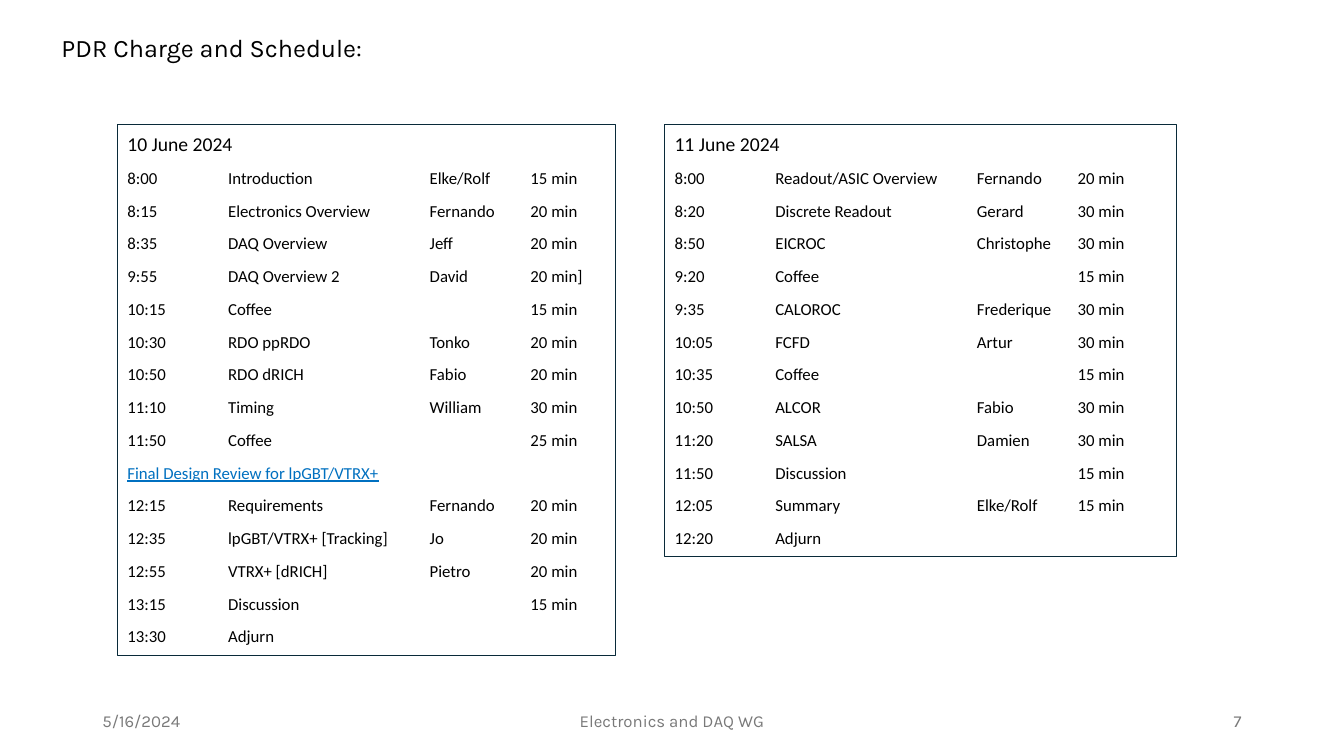
import dataclasses

import lxml.etree
import pptx
import pptx.dml.color
import pptx.enum.shapes
import pptx.enum.text
import pptx.oxml.ns
import pptx.util

Cm = pptx.util.Cm
Align = pptx.enum.text.PP_ALIGN
Anchor = pptx.enum.text.MSO_ANCHOR
Fit = pptx.enum.text.MSO_AUTO_SIZE


@dataclasses.dataclass(frozen=True)
class Theme:
    ink: str = "000000"
    muted: str = "797979"
    link: str = "0070C0"
    border: str = "092A39"
    heading_font: str = "Karla"
    body_font: str = "Calibri"
    title_size: int = 18
    day_size: int = 14
    body_size: int = 12
    border_width: float = 0.75
    column_stops: tuple = (2.54, 7.62, 10.16)


def apply_format(target, values):
    for name, value in values.items():
        setattr(target, name, value)


class SlideBuilder:
    def __init__(self, page, theme):
        self.page = page
        self.theme = theme

    def color(self, code):
        return pptx.dml.color.RGBColor.from_string(code)

    def add_span(self, para, text, color, **font):
        span = para.add_run()
        span.text = text
        apply_format(span.font, font)
        span.font.color.rgb = self.color(color)

    def label(self, text, bounds, color, size, align=Align.LEFT, **frame):
        box = self.page.shapes.add_textbox(*map(Cm, bounds))
        apply_format(box.text_frame, frame)
        para = box.text_frame.paragraphs[0]
        para.alignment = align
        self.add_span(para, text, color, name=self.theme.heading_font,
                      size=pptx.util.Pt(size))

    def add_column_stops(self, para):
        qn = pptx.oxml.ns.qn
        stops = lxml.etree.SubElement(para._p.get_or_add_pPr(), qn("a:tabLst"))
        for stop in self.theme.column_stops:
            lxml.etree.SubElement(stops, qn("a:tab"), pos=str(int(Cm(stop))), algn="l")

    def schedule(self, day, rows, bounds):
        theme = self.theme
        box = self.page.shapes.add_shape(
            pptx.enum.shapes.MSO_SHAPE.RECTANGLE, *map(Cm, bounds))
        box.shadow.inherit = False
        box.fill.background()
        box.line.color.rgb = self.color(theme.border)
        box.line.width = pptx.util.Pt(theme.border_width)
        frame = box.text_frame
        apply_format(frame, {"word_wrap": True, "vertical_anchor": Anchor.TOP,
                             "auto_size": Fit.SHAPE_TO_FIT_TEXT})
        for index, row in enumerate([(day,), *rows]):
            para = frame.add_paragraph() if index else frame.paragraphs[0]
            apply_format(para, {"alignment": Align.LEFT, "line_spacing": 1.07,
                                "space_after": pptx.util.Pt(8)})
            self.add_column_stops(para)
            is_link = index > 0 and len(row) == 1
            size = theme.body_size if index else theme.day_size
            self.add_span(para, "\t".join(row), theme.link if is_link else theme.ink,
                          name=theme.body_font, size=pptx.util.Pt(size),
                          underline=is_link)


FIRST_DAY = [
    ("8:00", "Introduction", "Elke/Rolf", "15 min"),
    ("8:15", "Electronics Overview", "Fernando", "20 min"),
    ("8:35", "DAQ Overview", "Jeff", "20 min"),
    ("9:55", "DAQ Overview 2", "David", "20 min]"),
    ("10:15", "Coffee", "", "15 min"),
    ("10:30", "RDO ppRDO", "Tonko", "20 min"),
    ("10:50", "RDO dRICH", "Fabio", "20 min"),
    ("11:10", "Timing", "William", "30 min"),
    ("11:50", "Coffee", "", "25 min"),
    ("Final Design Review for lpGBT/VTRX+",),
    ("12:15", "Requirements", "Fernando", "20 min"),
    ("12:35", "lpGBT/VTRX+ [Tracking]", "Jo", "20 min"),
    ("12:55", "VTRX+ [dRICH]", "Pietro", "20 min"),
    ("13:15", "Discussion", "", "15 min"),
    ("13:30", "Adjurn"),
]

SECOND_DAY = [
    ("8:00", "Readout/ASIC Overview", "Fernando", "20 min"),
    ("8:20", "Discrete Readout", "Gerard", "30 min"),
    ("8:50", "EICROC", "Christophe", "30 min"),
    ("9:20", "Coffee", "", "15 min"),
    ("9:35", "CALOROC", "Frederique", "30 min"),
    ("10:05", "FCFD", "Artur", "30 min"),
    ("10:35", "Coffee", "", "15 min"),
    ("10:50", "ALCOR", "Fabio", "30 min"),
    ("11:20", "SALSA", "Damien", "30 min"),
    ("11:50", "Discussion", "", "15 min"),
    ("12:05", "Summary", "Elke/Rolf", "15 min"),
    ("12:20", "Adjurn"),
]


def main():
    deck = pptx.Presentation()
    apply_format(deck, {"slide_width": Cm(33.87), "slide_height": Cm(19.05)})
    page = deck.slides.add_slide(deck.slide_layouts[6])
    theme = Theme()
    builder = SlideBuilder(page, theme)

    footers = [
        ("5/16/2024", 2.33, 7.62, Align.LEFT),
        ("Electronics and DAQ WG", 11.22, 11.43, Align.CENTER),
        ("7", 23.92, 7.62, Align.RIGHT),
    ]
    for text, left, width, align in footers:
        builder.label(text, (left, 17.66, width, 1.01), theme.muted, theme.body_size,
                      align, word_wrap=True, vertical_anchor=Anchor.MIDDLE)

    builder.label("PDR Charge and Schedule:", (1.3, 0.69, 8.33, 1.03), theme.ink,
                  theme.title_size, word_wrap=False, auto_size=Fit.SHAPE_TO_FIT_TEXT)
    builder.schedule("10 June 2024", FIRST_DAY, (2.96, 3.15, 12.55, 13.38))
    builder.schedule("11 June 2024", SECOND_DAY, (16.75, 3.15, 12.9, 10.87))

    deck.save("out.pptx")


if __name__ == "__main__":
    main()
